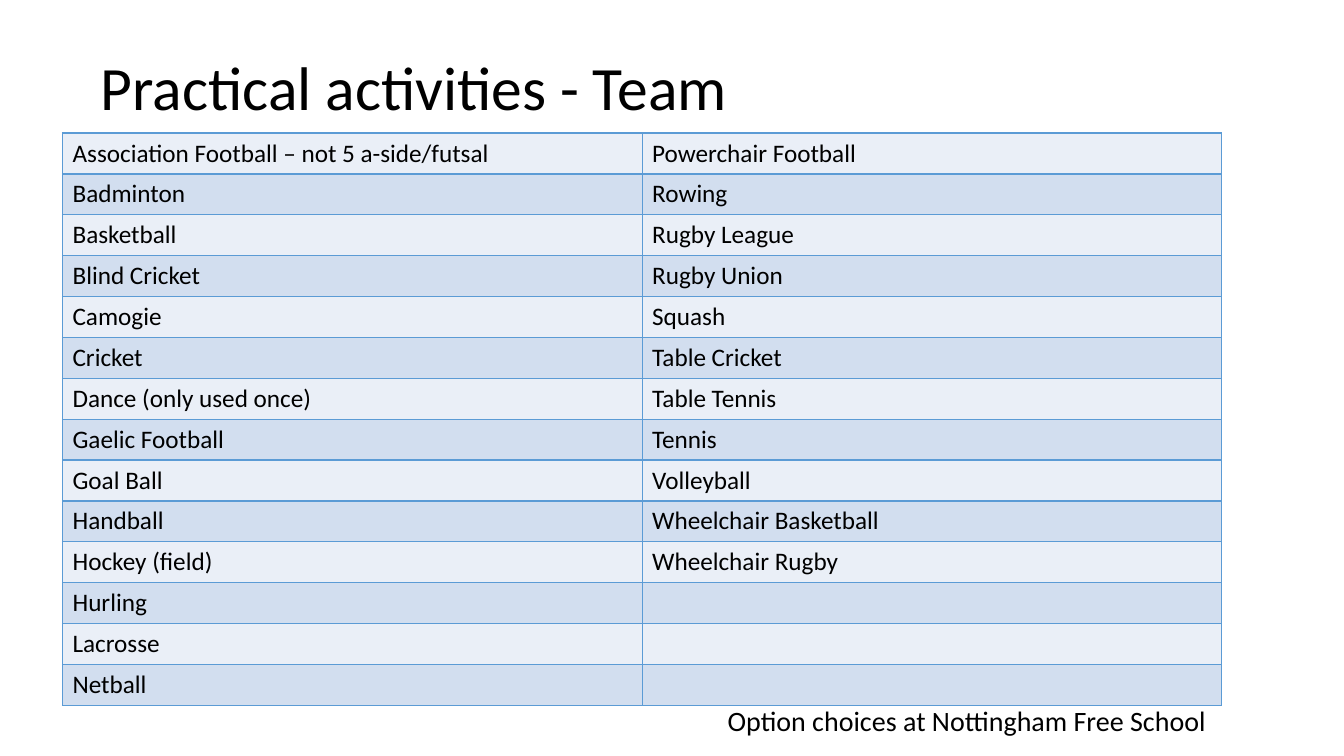
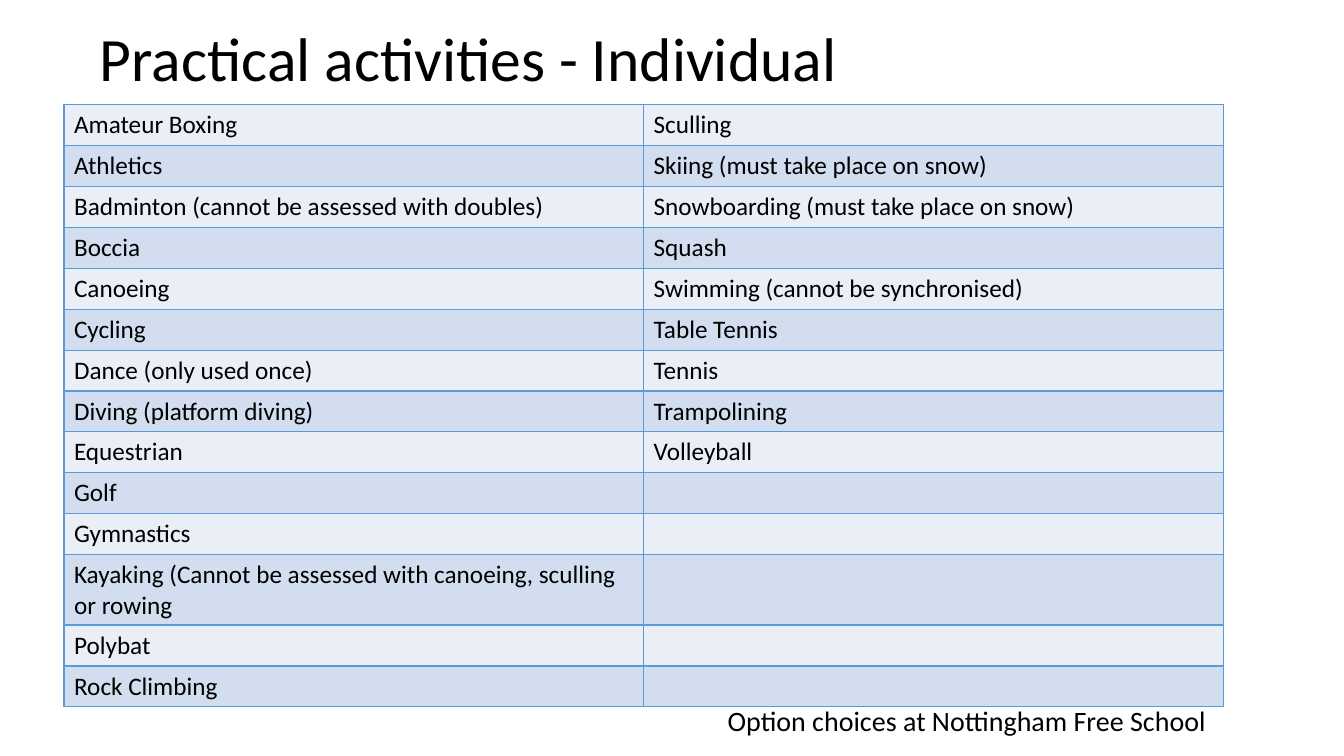
from dataclasses import dataclass
from itertools import zip_longest

from lxml.etree import SubElement as Sub
from pptx import Presentation
from pptx.dml.color import RGBColor as RGB
from pptx.enum.text import MSO_ANCHOR as Anchor
from pptx.oxml.ns import qn
from pptx.util import Pt

FOOTER = "Option choices at Nottingham Free School"

SLIDES = [
    {
        "title": "Practical activities - Team",
        "spot": (64.8, 12.24),
        "grid": (44.64, 95.04),
        "left": [
            "Association Football – not 5 a-side/futsal", "Badminton",
            "Basketball", "Blind Cricket", "Camogie", "Cricket",
            "Dance (only used once)", "Gaelic Football", "Goal Ball",
            "Handball", "Hockey (field)", "Hurling", "Lacrosse", "Netball",
        ],
        "right": [
            "Powerchair Football", "Rowing", "Rugby League", "Rugby Union",
            "Squash", "Table Cricket", "Table Tennis", "Tennis",
            "Volleyball", "Wheelchair Basketball", "Wheelchair Rugby",
        ],
    },
    {
        "title": "Practical activities - Individual",
        "spot": (64.08, -7.92),
        "grid": (45.72, 74.88),
        "left": [
            "Amateur Boxing", "Athletics",
            "Badminton (cannot be assessed with doubles)", "Boccia",
            "Canoeing", "Cycling", "Dance (only used once)",
            "Diving (platform diving)", "Equestrian", "Golf", "Gymnastics",
            "Kayaking (Cannot be assessed with canoeing, sculling or rowing",
            "Polybat", "Rock Climbing",
        ],
        "right": [
            "Sculling", "Skiing (must take place on snow)",
            "Snowboarding (must take place on snow)", "Squash",
            "Swimming (cannot be synchronised)", "Table Tennis", "Tennis",
            "Trampolining", "Volleyball",
        ],
    },
]


@dataclass(frozen=True)
class Theme:
    font: str = "Calibri"
    ink: str = "000000"
    bands: tuple = ("EAEFF7", "D2DEEF")
    rule: str = "5B9BD5"
    title: int = 44
    foot: int = 20
    body: int = 18


THEME = Theme()
WIDTH = 828
ROW = 29.2


def write(para, text, size):
    run = para.add_run()
    run.text = text
    run.font.name = THEME.font
    run.font.size = Pt(size)
    run.font.color.rgb = RGB.from_string(THEME.ink)


def add_text(slide, text, box, size, anchor=Anchor.TOP, space=1.0):
    frame = slide.shapes.add_textbox(*map(Pt, box)).text_frame
    frame.word_wrap = True
    frame.vertical_anchor = anchor
    para = frame.paragraphs[0]
    para.line_spacing = space
    write(para, text, size)


def add_edges(cell):
    props = cell._tc.get_or_add_tcPr()
    for side in "LRTB":
        line = Sub(props, qn(f"a:ln{side}"), w=str(Pt(1)))
        fill = Sub(line, qn("a:solidFill"))
        Sub(fill, qn("a:srgbClr"), val=THEME.rule)


def add_grid(slide, spot, left, right):
    rows = list(zip_longest(left, right, fillvalue=""))
    box = (*spot, WIDTH, ROW * len(rows))
    table = slide.shapes.add_table(len(rows), 2, *map(Pt, box)).table
    table.first_row = table.horz_banding = False
    for r, names in enumerate(rows):
        table.rows[r].height = Pt(ROW)
        for c, name in enumerate(names):
            cell = table.cell(r, c)
            add_edges(cell)
            cell.fill.solid()
            cell.fill.fore_color.rgb = RGB.from_string(THEME.bands[r % 2])
            para = cell.text_frame.paragraphs[0]
            para.font.size = Pt(THEME.body)
            if name:
                write(para, name, THEME.body)


def main():
    deck = Presentation()
    deck.slide_width, deck.slide_height = Pt(960), Pt(540)
    for page in SLIDES:
        slide = deck.slides.add_slide(deck.slide_layouts[6])
        add_text(slide, FOOTER, (512.64, 498.96, 369.36, 28.8), THEME.foot)
        add_text(slide, page["title"], (*page["spot"], WIDTH, 104.4),
                 THEME.title, Anchor.MIDDLE, 0.9)
        add_grid(slide, page["grid"], page["left"], page["right"])
    deck.save("out.pptx")


if __name__ == "__main__":
    main()
